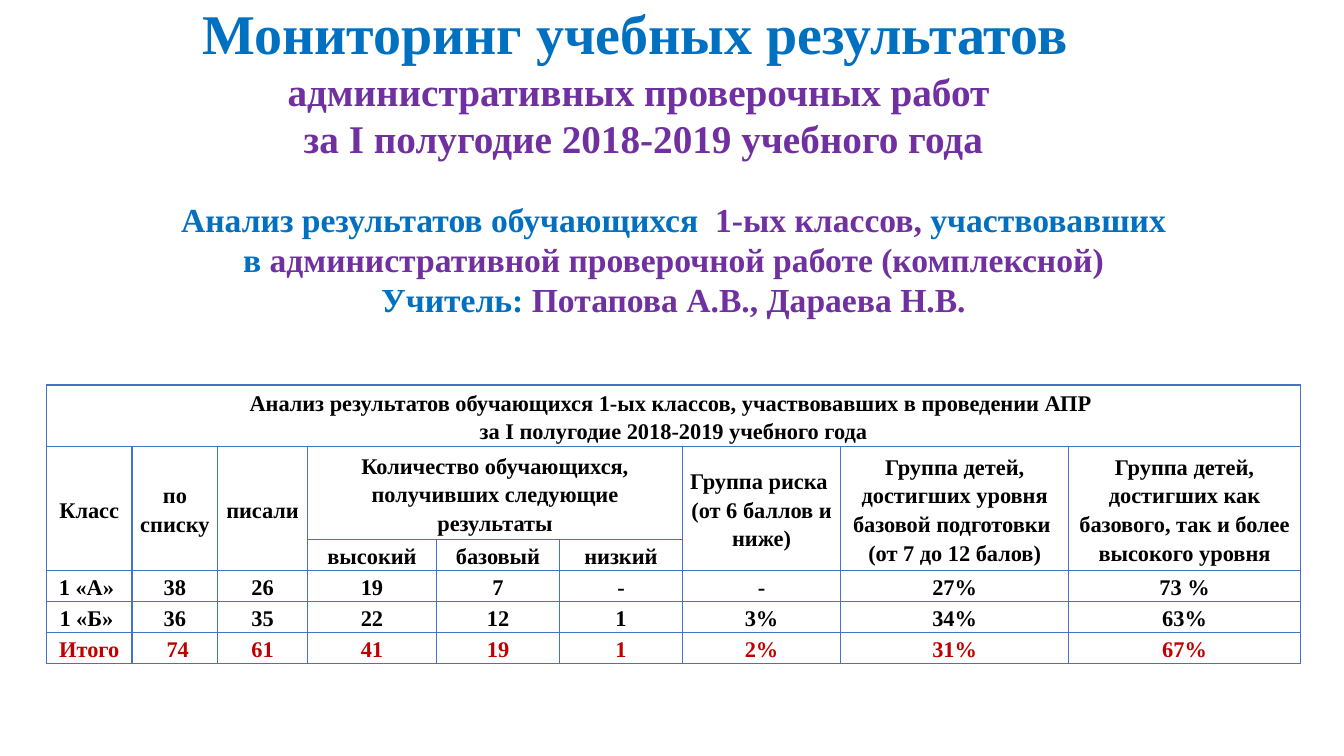
from lxml import etree
from pptx import Presentation
from pptx import util as u
from pptx.dml.color import RGBColor
from pptx.enum import text
from pptx.oxml import ns

COLORS = {"blue": "0070C0", "purple": "7030A0", "red": "C00000",
          "black": "000000", "white": "FFFFFF", "border": "4472C4"}
BLUE, PURPLE = {"color": "blue"}, {"color": "purple"}


def rgb(name):
    return RGBColor.from_string(COLORS[name])


def write(tf, paragraphs, font="Times New Roman", size=16, color="black",
          bold=True, spacing=None):
    """Fill a frame; a paragraph is a string or a list of (text, overrides)."""
    for i, runs in enumerate(paragraphs):
        p = tf.paragraphs[0] if i == 0 else tf.add_paragraph()
        p.alignment = text.PP_ALIGN.CENTER
        if spacing:
            p.line_spacing = spacing
        for words, own in [(runs, {})] if isinstance(runs, str) else runs:
            r = p.add_run()
            r.text = words
            r.font.name = font
            r.font.bold = bold
            r.font.size = u.Pt(own.get("size", size))
            r.font.color.rgb = rgb(own.get("color", color))


class Deck:
    def __init__(self, width, height):
        self.prs = Presentation()
        self.prs.slide_width = u.Inches(width)
        self.prs.slide_height = u.Inches(height)
        self.s = self.prs.slides.add_slide(self.prs.slide_layouts[5])

    def frame(self, sp, box, paragraphs, **fmt):
        sp.left, sp.top, sp.width, sp.height = map(u.Inches, box)
        tf = sp.text_frame
        tf.word_wrap = True
        tf.vertical_anchor = text.MSO_ANCHOR.TOP
        tf.auto_size = text.MSO_AUTO_SIZE.SHAPE_TO_FIT_TEXT
        write(tf, paragraphs, **fmt)

    def title(self, box, paragraphs, **fmt):
        self.frame(self.s.shapes.title, box, paragraphs, **fmt)

    def textbox(self, box, paragraphs, **fmt):
        sp = self.s.shapes.add_textbox(*map(u.Inches, box))
        self.frame(sp, box, paragraphs, **fmt)

    def cell_borders(self, cell):
        pr = cell._tc.get_or_add_tcPr()
        for i, side in enumerate(("lnL", "lnR", "lnT", "lnB")):
            ln = etree.Element(ns.qn(f"a:{side}"), w=str(u.Pt(1)))
            fill = etree.SubElement(ln, ns.qn("a:solidFill"))
            etree.SubElement(fill, ns.qn("a:srgbClr"), val=COLORS["border"])
            pr.insert(i, ln)

    def table(self, left, top, widths, heights, cells, spans, red_row):
        shape = self.s.shapes.add_table(
            len(heights), len(widths), u.Inches(left), u.Inches(top),
            u.Inches(sum(widths)), u.Inches(sum(heights)))
        tbl = shape.table
        tbl.first_row = tbl.horz_banding = False
        for col, width in zip(tbl.columns, widths):
            col.width = u.Inches(width)
        for row, height in zip(tbl.rows, heights):
            row.height = u.Inches(height)
        for r, row in enumerate(cells):
            for c, words in enumerate(row):
                cell = tbl.cell(r, c)
                cell.margin_left = cell.margin_right = u.Inches(0.07)
                cell.margin_top = cell.margin_bottom = 0
                cell.vertical_anchor = text.MSO_ANCHOR.MIDDLE
                cell.fill.solid()
                cell.fill.fore_color.rgb = rgb("white")
                self.cell_borders(cell)
                if words:
                    write(cell.text_frame, words.split("\n"), spacing=1.15,
                          color="red" if r == red_row else "black")
        for r1, c1, r2, c2 in spans:
            tbl.cell(r1, c1).merge(tbl.cell(r2, c2))


def main():
    deck = Deck(13.33, 7.5)

    # Heading
    deck.title((0.67, -0.18, 11.42, 1.85), [
        [("Мониторинг учебных результатов", {"size": 40, **BLUE}),
         (" ", {"size": 48})],
        "административных проверочных работ ",
        "за I полугодие 2018-2019 учебного года",
    ], size=28, color="purple")

    # Subject and teachers
    deck.textbox((1.66, 1.92, 10.04, 1.31), [
        [("Анализ результатов обучающихся  ", BLUE),
         ("1-ых классов, ", PURPLE),
         ("участвовавших в ", BLUE),
         ("административной проверочной работе (комплексной)", PURPLE)],
        [("Учитель: ", BLUE), ("Потапова А.В., Дараева Н.В.", PURPLE)],
    ], size=24)

    # Results by class
    cells = [
        ["Анализ результатов обучающихся 1-ых классов, участвовавших в проведении АПР \n"
         "за I полугодие 2018-2019 учебного года"] + [""] * 8,
        ["Класс", "по списку", "писали",
         "Количество обучающихся,\nполучивших следующие результаты", "", "",
         "Группа риска \n(от 6 баллов и ниже)",
         "Группа детей, достигших уровня базовой подготовки \n(от 7 до 12 балов)",
         "Группа детей, достигших как базового, так и более высокого уровня"],
        ["", "", "", "высокий", "базовый", "низкий", "", "", ""],
        ["1 «А» ", "38", "26", "19", "7", "-", "-", "27%", "73 %"],
        ["1 «Б» ", "36", "35", "22", "12", "1", "3%", "34%", "63%"],
        ["Итого", " 74", "61", "41", "19", "1", "2%", "31%", "67%"],
    ]
    spans = [(0, 0, 0, 8), (1, 3, 1, 5)]
    spans += [(1, c, 2, c) for c in (0, 1, 2, 6, 7, 8)]
    deck.table(0.46, 3.82,
               [0.85, 0.85, 0.89, 1.28, 1.22, 1.22, 1.57, 2.26, 2.3],
               [0.6, 0.92] + [0.3] * 4, cells, spans, red_row=5)

    deck.prs.save("out.pptx")


if __name__ == "__main__":
    main()
